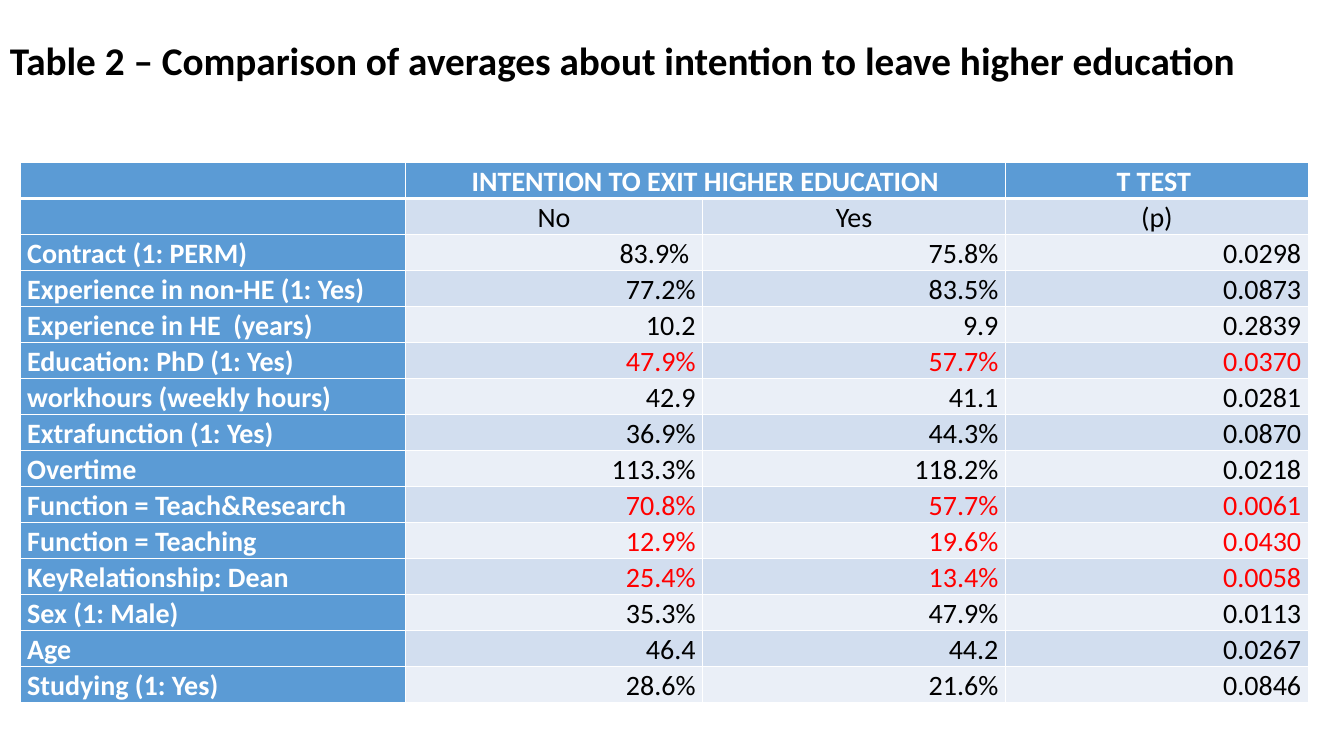
from dataclasses import dataclass

from lxml import etree
from pptx import Presentation
from pptx import util as u
from pptx.dml import color
from pptx.enum import text
from pptx.oxml import ns


@dataclass(frozen=True)
class Theme:
    """Colours, font and type sizes of the slide."""
    font: str = "Calibri"
    ink: str = "000000"
    paper: str = "FFFFFF"
    accent: str = "5B9BD5"
    bands: tuple = ("D2DEEF", "EAEFF7")
    highlight: str = "FF0000"
    title_size: int = 28
    table_size: int = 20
    rule: int = 1
    header_rule: int = 3


LEFT, CENTER, RIGHT = text.PP_ALIGN.LEFT, text.PP_ALIGN.CENTER, text.PP_ALIGN.RIGHT
TITLE = "Table 2 – Comparison of averages about intention to leave higher education"
HEADINGS = [
    ("", "INTENTION TO EXIT HIGHER EDUCATION", "", "T TEST "),
    ("", "No", "Yes", "(p)"),
]
AVERAGES = [
    ("Contract (1: PERM)", "83.9% ", "75.8%", "0.0298"),
    ("Experience in non-HE (1: Yes)", "77.2%", "83.5%", "0.0873"),
    ("Experience in HE  (years)", "10.2", "9.9", "0.2839"),
    ("Education: PhD (1: Yes)", "47.9%", "57.7%", "0.0370"),
    ("workhours (weekly hours)", "42.9", "41.1", "0.0281"),
    ("Extrafunction (1: Yes)", "36.9%", "44.3%", "0.0870"),
    ("Overtime", "113.3%", "118.2%", "0.0218"),
    ("Function = Teach&Research", "70.8%", "57.7%", "0.0061"),
    ("Function = Teaching", "12.9%", "19.6%", "0.0430"),
    ("KeyRelationship: Dean", "25.4%", "13.4%", "0.0058"),
    ("Sex (1: Male)", "35.3%", "47.9%", "0.0113"),
    ("Age", "46.4", "44.2", "0.0267"),
    ("Studying (1: Yes)", "28.6%", "21.6%", "0.0846"),
]
HIGHLIGHTED = {
    "Education: PhD (1: Yes)",
    "Function = Teach&Research",
    "Function = Teaching",
    "KeyRelationship: Dean",
}


def write(frame, words, *, font, size, ink, bold=False, align=LEFT, spacing=1.0):
    """Write one formatted paragraph into a text frame."""
    paragraph = frame.paragraphs[0]
    paragraph.alignment = align
    paragraph.line_spacing = spacing
    if words:
        run = paragraph.add_run()
        run.text = words
        run.font.name = font
        run.font.size = u.Pt(size)
        run.font.bold = bold
        run.font.color.rgb = color.RGBColor.from_string(ink)


class Page:
    """Draws on one slide, with lengths in percent of its size."""

    def __init__(self, deck, theme):
        """Add a blank slide to the deck."""
        self.deck, self.theme = deck, theme
        self.slide = deck.slides.add_slide(deck.slide_layouts[6])

    def across(self, share):
        """Turn a percentage of the width into a length."""
        return u.Emu(round(self.deck.slide_width * share / 100))

    def down(self, share):
        """Turn a percentage of the height into a length."""
        return u.Emu(round(self.deck.slide_height * share / 100))

    def title(self, words, left, top, width, height):
        """Add the title."""
        box = self.slide.shapes.add_textbox(
            self.across(left), self.down(top), self.across(width), self.down(height))
        frame = box.text_frame
        frame.word_wrap = True
        frame.vertical_anchor = text.MSO_ANCHOR.MIDDLE
        write(frame, words, font=self.theme.font, size=self.theme.title_size,
              ink=self.theme.ink, bold=True, spacing=0.9)

    def borders(self, cell, **widths):
        """Rule the sides of a cell, with widths in points."""
        properties = cell._tc.get_or_add_tcPr()
        for side in "LRTB":
            line = etree.SubElement(properties, ns.qn(f"a:ln{side}"),
                                    w=str(u.Pt(widths.get(side, self.theme.rule))))
            fill = etree.SubElement(line, ns.qn("a:solidFill"))
            etree.SubElement(fill, ns.qn("a:srgbClr"), val=self.theme.paper)

    def cell(self, cell, words, row, column, marked):
        """Fill one cell according to its place in the table."""
        theme = self.theme
        heading = row == 0 or column == 0
        fill = theme.accent if heading else theme.bands[(row - 1) % 2]
        ink = theme.paper if heading else theme.highlight if marked else theme.ink
        align = LEFT if column == 0 else CENTER if row < len(HEADINGS) else RIGHT
        edges = {0: {"B": theme.header_rule}, 1: {"T": theme.header_rule}}
        self.borders(cell, **edges.get(row, {}))
        cell.fill.solid()
        cell.fill.fore_color.rgb = color.RGBColor.from_string(fill)
        cell.margin_left = cell.margin_right = u.Inches(0.07)
        cell.margin_top = cell.margin_bottom = 0
        write(cell.text_frame, words, font=theme.font, size=theme.table_size,
              ink=ink, bold=heading, align=align, spacing=1.07)

    def table(self, rows, left, top, widths, height):
        """Add the table of averages."""
        table = self.slide.shapes.add_table(
            len(rows), len(widths), self.across(left), self.down(top),
            self.across(sum(widths)), self.down(height)).table
        table.first_row = table.horz_banding = False
        for column, width in zip(table.columns, widths):
            column.width = self.across(width)
        for row, entries in enumerate(rows):
            for column, words in enumerate(entries):
                self.cell(table.cell(row, column), words, row, column,
                          entries[0] in HIGHLIGHTED)
        table.cell(0, 1).merge(table.cell(0, 2))


def main():
    """Build and save the slide."""
    deck = Presentation()
    deck.slide_width, deck.slide_height = u.Inches(13.33), u.Inches(7.5)
    page = Page(deck, Theme())
    page.title(TITLE, left=0, top=1.73, width=100, height=13.2)
    page.table(HEADINGS + AVERAGES, left=1.5, top=21.5,
               widths=(28.66, 22.13, 22.53, 22.53), height=71.33)
    deck.save("out.pptx")


if __name__ == "__main__":
    main()
